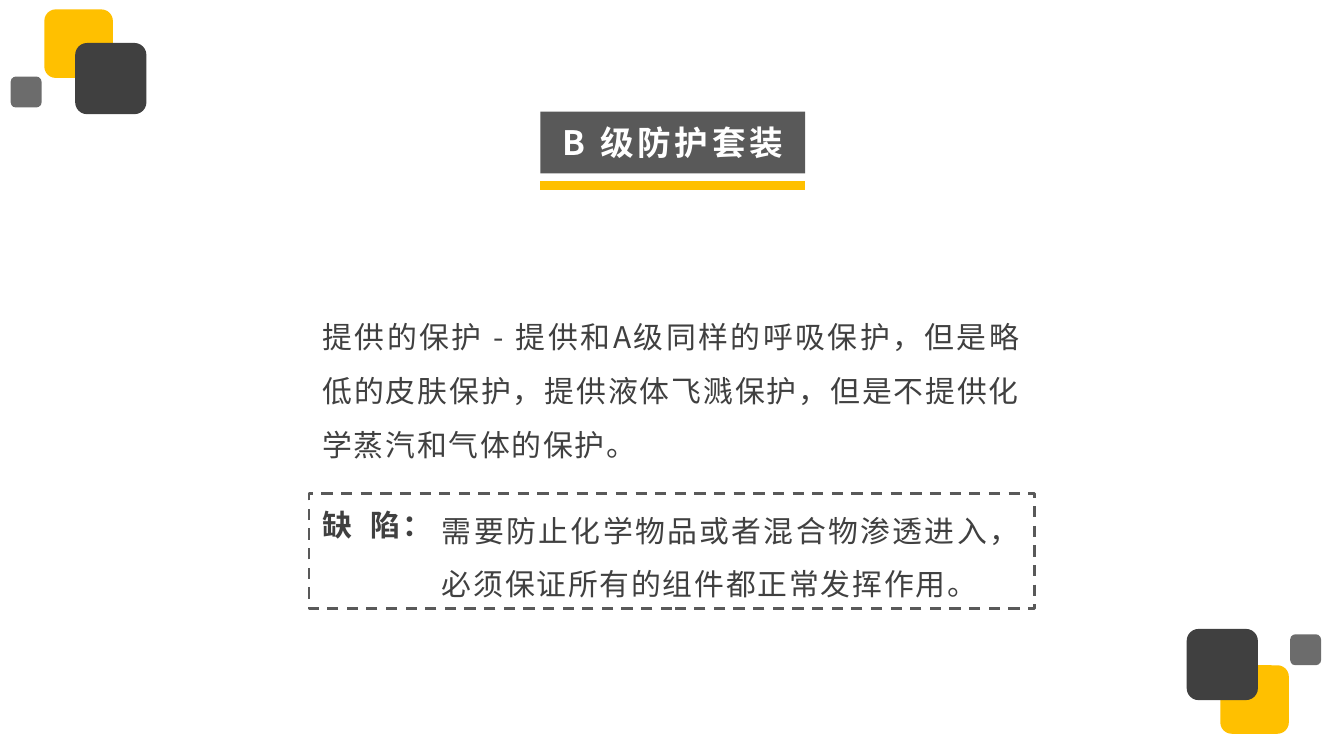
from dataclasses import dataclass

from lxml.etree import SubElement
from pptx import Presentation
from pptx.dml.color import RGBColor
from pptx.enum.dml import MSO_LINE_DASH_STYLE as Dash
from pptx.enum.shapes import MSO_CONNECTOR as Connector, MSO_SHAPE as Shape
from pptx.enum.text import MSO_ANCHOR as Anchor, MSO_AUTO_SIZE as AutoSize, PP_ALIGN as Align
from pptx.oxml.ns import qn
from pptx.util import Inches, Pt


@dataclass(frozen=True)
class Theme:
    font: str = "Noto Sans CJK SC"
    yellow: str = "FFC000"
    dark: str = "404040"
    gray: str = "595959"
    white: str = "FFFFFF"
    title_size: int = 18
    body_size: int = 16


@dataclass(frozen=True)
class Tile:
    left: float
    top: float
    size: float
    color: str
    opacity: int = 100


@dataclass(frozen=True)
class TextBlock:
    left: float
    top: float
    width: float
    height: float
    text: str
    bold: bool = False
    line_spacing: float = 1.5


THEME = Theme()
SLIDE_WIDTH = 10
SLIDE_HEIGHT = SLIDE_WIDTH * 9 / 16
BODY_LEFT, BODY_WIDTH = 2.3, 5.4
BAR_LEFT, BAR_WIDTH = 4.02, 1.97
BIG, MEDIUM, SMALL = 0.53, 0.51, 0.23

TILES = [
    # Top-left cluster
    Tile(0.33, 0.07, MEDIUM, THEME.yellow),
    Tile(0.56, 0.32, BIG, THEME.dark),
    Tile(0.08, 0.57, SMALL, THEME.dark, 77),
    # Bottom-right cluster
    Tile(9.08, 4.95, MEDIUM, THEME.yellow),
    Tile(8.83, 4.68, BIG, THEME.dark),
    Tile(9.6, 4.72, SMALL, THEME.dark, 77),
]

BLOCKS = [
    TextBlock(BODY_LEFT, 2.19, BODY_WIDTH, 1.27,
              "提供的保护 - 提供和A级同样的呼吸保护，但是略低的皮肤保护，"
              "提供液体飞溅保护，但是不提供化学蒸汽和气体的保护。"),
    TextBlock(BODY_LEFT, 3.72, 1.3, 0.37, "缺  陷：", bold=True, line_spacing=1.0),
    TextBlock(3.19, 3.63, 4.51, 0.86,
              "需要防止化学物品或者混合物渗透进入，必须保证所有的组件都正常发挥作用。"),
]


def rgb(color: str) -> RGBColor:
    return RGBColor.from_string(color)


def write_text(tf, text: str, *, size: int = THEME.body_size, color: str = THEME.dark,
               bold: bool = False, align=Align.JUSTIFY, anchor=Anchor.TOP,
               line_spacing: float = 1.0, tracking: int = 1, wrap: bool = True) -> None:
    tf.word_wrap = wrap
    tf.auto_size = AutoSize.NONE
    tf.vertical_anchor = anchor
    p = tf.paragraphs[0]
    p.alignment, p.line_spacing = align, line_spacing
    r = p.add_run()
    r.text = text
    r.font.size, r.font.bold, r.font.name = Pt(size), bold, THEME.font
    r.font.color.rgb = rgb(color)
    # East Asian typeface and letter spacing
    props = r.font._element
    props.set("spc", str(tracking * 100))
    SubElement(props, qn("a:ea")).set("typeface", THEME.font)


def draw_tile(s, tile: Tile) -> None:
    sp = s.shapes.add_shape(Shape.ROUNDED_RECTANGLE, Inches(tile.left), Inches(tile.top),
                            Inches(tile.size), Inches(tile.size))
    sp.shadow.inherit = False
    sp.fill.solid()
    sp.fill.fore_color.rgb = rgb(tile.color)
    sp.line.fill.background()
    if tile.opacity < 100:
        clr = sp._element.spPr.find(qn("a:solidFill")).find(qn("a:srgbClr"))
        SubElement(clr, qn("a:alpha")).set("val", str(tile.opacity * 1000))


def draw_title(s, text: str) -> None:
    # Dark title bar
    sp = s.shapes.title
    sp.left, sp.top = Inches(BAR_LEFT), Inches(0.83)
    sp.width, sp.height = Inches(BAR_WIDTH), Inches(0.46)
    sp.fill.solid()
    sp.fill.fore_color.rgb = rgb(THEME.gray)
    tf = sp.text_frame
    tf.margin_left = tf.margin_right = Inches(0.12)
    tf.margin_top = tf.margin_bottom = Inches(0.08)
    write_text(tf, text, size=THEME.title_size, color=THEME.white, bold=True,
               align=Align.CENTER, anchor=Anchor.MIDDLE, tracking=2, wrap=False)

    # Yellow underline
    y = Inches(1.38)
    line = s.shapes.add_connector(Connector.STRAIGHT, Inches(BAR_LEFT), y,
                                  Inches(BAR_LEFT + BAR_WIDTH), y)
    line.line.color.rgb = rgb(THEME.yellow)
    line.line.width = Pt(5)
    SubElement(line._element.spPr, qn("a:effectLst"))


def draw_block(s, block: TextBlock) -> None:
    sp = s.shapes.add_textbox(Inches(block.left), Inches(block.top),
                              Inches(block.width), Inches(block.height))
    write_text(sp.text_frame, block.text, bold=block.bold, line_spacing=block.line_spacing)


def draw_dashed_frame(s) -> None:
    sp = s.shapes.add_shape(Shape.RECTANGLE, Inches(BODY_LEFT), Inches(3.67),
                            Inches(BODY_WIDTH), Inches(0.86))
    sp.shadow.inherit = False
    sp.fill.background()
    sp.line.color.rgb = rgb(THEME.gray)
    sp.line.width = Pt(1.5)
    sp.line.dash_style = Dash.DASH


def main() -> None:
    prs = Presentation()
    prs.slide_width, prs.slide_height = Inches(SLIDE_WIDTH), Inches(SLIDE_HEIGHT)
    s = prs.slides.add_slide(prs.slide_layouts[5])

    # Corner decoration
    for tile in TILES:
        draw_tile(s, tile)

    # Title and body
    draw_title(s, "B 级防护套装")
    for block in BLOCKS:
        draw_block(s, block)
    draw_dashed_frame(s)

    prs.save("out.pptx")


if __name__ == "__main__":
    main()
